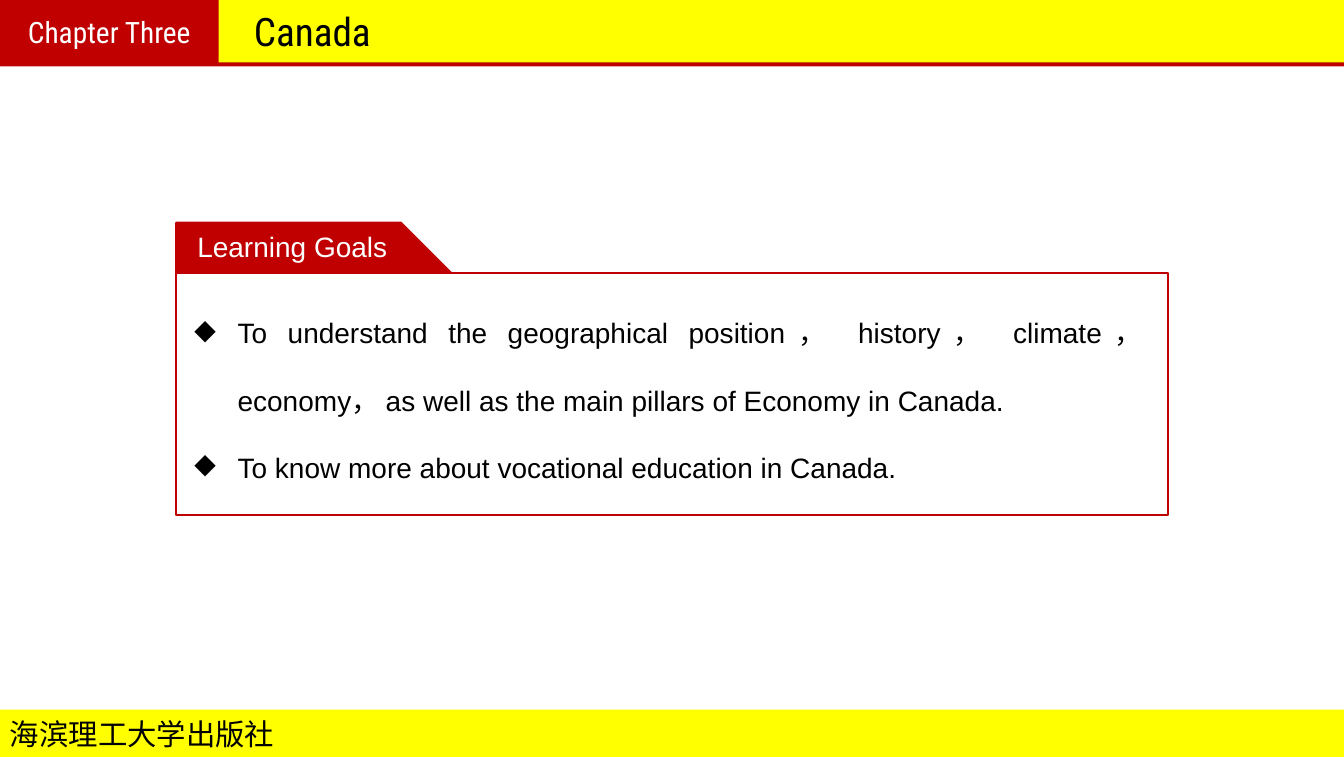
from dataclasses import dataclass

import lxml.etree
import pptx
import pptx.dml.color
import pptx.enum.shapes
import pptx.enum.text
import pptx.oxml.ns
import pptx.presentation
import pptx.shapes.base
import pptx.slide
import pptx.text.text
import pptx.util

Inches = pptx.util.Inches
Pt = pptx.util.Pt
Kind = pptx.enum.shapes.MSO_SHAPE
Align = pptx.enum.text.PP_ALIGN
Anchor = pptx.enum.text.MSO_ANCHOR

RED, YELLOW, WHITE, BLACK = "C00000", "FFFF00", "FFFFFF", "000000"
WIDE, HIGH = 13.34, 7.51
HEAD, FOOT = 0.63, 0.47
SANS, NARROW = "Arial", "Roboto Condensed"

Box = tuple[float, float, float, float]


@dataclass
class Panel:
    box: Box
    fill: str
    snip: float | None = None
    line: str | None = None


@dataclass
class Label:
    box: Box
    lines: list[str]
    size: float
    font: str = SANS
    color: str = BLACK
    align: Align = Align.LEFT
    anchor: Anchor = Anchor.MIDDLE
    wrap: bool = False
    bullet: str = ""


PANELS = [
    Panel((0, HIGH - FOOT, WIDE, FOOT), YELLOW),
    Panel((0, 0, WIDE, HEAD), YELLOW),
    Panel((0, 0.62, WIDE, 0.04), RED),
    Panel((0, 0, 2.17, HEAD), RED),
    Panel((1.75, 2.21, 2.73, 1), RED, 0.5, RED),
    Panel((1.75, 2.71, 9.84, 2.4), WHITE, 0, RED),
]

GOALS = [
    "To understand the geographical position， history， climate，economy， "
    "as well as the main pillars of Economy in Canada.",
    "To know more about vocational education in Canada.",
]

LABELS = [
    Label((0, HIGH - FOOT, WIDE, FOOT), ["海滨理工大学出版社"], 21),
    Label((2.37, 0.01, 1.46, 0.59), ["Canada"], 28, NARROW, align=Align.CENTER),
    Label((0, 0, 2.17, HEAD), ["Chapter Three"], 21, NARROW, WHITE, Align.CENTER),
    Label((1.86, 2.23, 2.1, 0.44), ["Learning Goals"], 20, color=WHITE, anchor=Anchor.TOP),
    Label((1.83, 2.75, 9.61, 2.12), GOALS, 20, align=Align.JUSTIFY,
          anchor=Anchor.TOP, wrap=True, bullet="◆"),
]


def color(code: str) -> pptx.dml.color.RGBColor:
    return pptx.dml.color.RGBColor.from_string(code)


def place(box: Box) -> list[pptx.util.Length]:
    return [Inches(side) for side in box]


def draw(slide: pptx.slide.Slide, panel: Panel) -> None:
    kind = Kind.RECTANGLE if panel.snip is None else Kind.SNIP_1_RECTANGLE
    shape = slide.shapes.add_shape(kind, *place(panel.box))
    shape.shadow.inherit = False
    if panel.snip is not None:
        shape.adjustments[0] = panel.snip
    shape.fill.solid()
    shape.fill.fore_color.rgb = color(panel.fill)
    if panel.line:
        shape.line.color.rgb = color(panel.line)
        shape.line.width = Pt(1.5)
    else:
        shape.line.fill.background()


def mark(para: pptx.text.text._Paragraph, sign: str) -> None:
    """Give the paragraph a bullet, a hanging indent and double spacing."""
    para.line_spacing = 2.0
    props = para._p.get_or_add_pPr()
    props.set("marL", str(Inches(0.43)))
    props.set("indent", str(-Inches(0.43)))
    bullet = lxml.etree.SubElement(props, pptx.oxml.ns.qn("a:buChar"))
    bullet.set("char", sign)


def write(slide: pptx.slide.Slide, label: Label) -> None:
    frame = slide.shapes.add_textbox(*place(label.box)).text_frame
    frame.word_wrap = label.wrap
    frame.vertical_anchor = label.anchor
    frame.text = "\n".join(label.lines)
    for para in frame.paragraphs:
        para.alignment = label.align
        if label.bullet:
            mark(para, label.bullet)
        for run in para.runs:
            run.font.size = Pt(label.size)
            run.font.name = label.font
            run.font.color.rgb = color(label.color)


def main() -> None:
    deck = pptx.Presentation()
    deck.slide_width, deck.slide_height = Inches(WIDE), Inches(HIGH)
    slide = deck.slides.add_slide(deck.slide_layouts[6])
    for panel in PANELS:
        draw(slide, panel)
    for label in LABELS:
        write(slide, label)
    deck.save("out.pptx")


if __name__ == "__main__":
    main()
